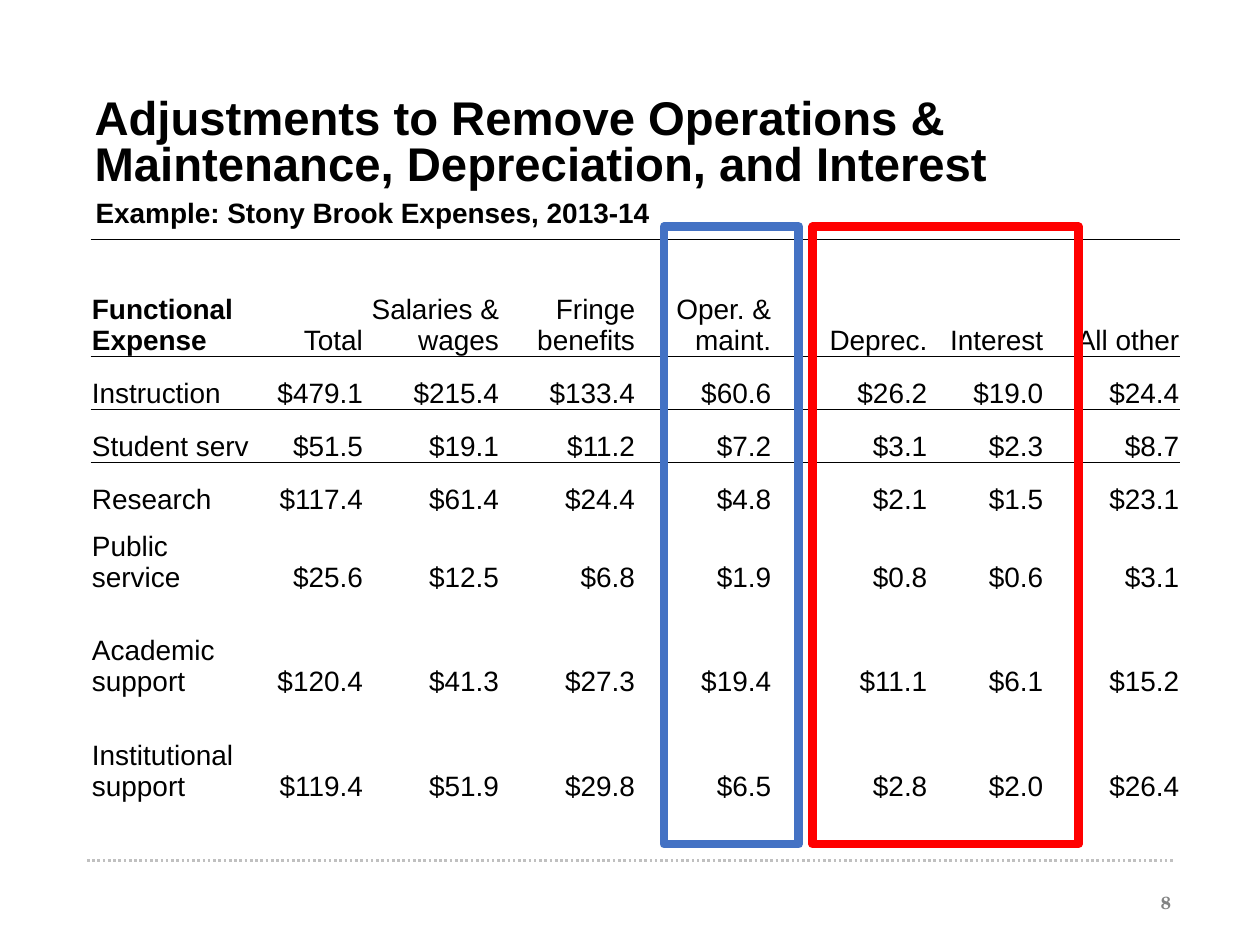
from lxml import etree
from pptx import Presentation
from pptx.dml.color import RGBColor
from pptx.enum.dml import MSO_LINE
from pptx.enum.shapes import MSO_CONNECTOR, MSO_SHAPE
from pptx.enum.text import MSO_ANCHOR, MSO_AUTO_SIZE, PP_ALIGN
from pptx.oxml import parse_xml
from pptx.oxml.ns import nsdecls, qn
from pptx.util import Inches, Pt

BLACK = RGBColor(0, 0, 0)
RED = RGBColor(0xFF, 0, 0)
BLUE = RGBColor(0x44, 0x72, 0xC4)
GRAY = RGBColor(0x82, 0x83, 0x83)
SILVER = RGBColor(0xC0, 0xC0, 0xC0)
LEFT, RIGHT = PP_ALIGN.LEFT, PP_ALIGN.RIGHT
TOP, BOTTOM = MSO_ANCHOR.TOP, MSO_ANCHOR.BOTTOM
NO_FIT, GROW = MSO_AUTO_SIZE.NONE, MSO_AUTO_SIZE.SHAPE_TO_FIT_TEXT
RECT, LINE, DOTS = MSO_SHAPE.RECTANGLE, MSO_CONNECTOR.STRAIGHT, MSO_LINE.ROUND_DOT
PLAIN = "{2D5ABB26-0587-4C30-8999-92F81FD0307C}"

deck = Presentation()
deck.slide_width, deck.slide_height = Inches(10), Inches(7.5)
UNIT = deck.slide_width / 100


def grid(*cells):
    return [round(n * UNIT) for n in cells]


def write(frame, text, size=16, font="Arial", color=BLACK, bold=False,
          align=LEFT, space=None):
    frame.text = text
    para = frame.paragraphs[0]
    para.alignment = align
    para.line_spacing = space
    face = para.runs[0].font if len(para.runs) == 1 else para.font
    for face in [run.font for run in para.runs]:
        face.size, face.name, face.bold = Pt(size), font, bold
        face.color.rgb = color


slide = deck.slides.add_slide(deck.slide_layouts[5])
shapes = slide.shapes

rule = shapes.add_connector(LINE, *grid(6.9, 68.3, 93.2, 68.3))
rule.line.color.rgb, rule.line.width = SILVER, Pt(1.5)
rule.line.dash_style = DOTS
etree.SubElement(rule._element.spPr, qn("a:effectLst"))

title = shapes.title
title.left, title.top, title.width, title.height = grid(6.5, 7.4, 87.4, 9)
frame = title.text_frame
frame.auto_size, frame.vertical_anchor, frame.word_wrap = NO_FIT, TOP, True
write(frame, "Adjustments to Remove Operations & Maintenance, "
      "Depreciation, and Interest", size=27, bold=True, space=0.8)

page = shapes.add_textbox(*grid(71.4, 70.3, 22.5, 4)).text_frame
page.word_wrap = True
write(page, "8", size=10, font="TeX Gyre Schola", color=GRAY, bold=True,
      align=RIGHT)

HEADS = ["Functional\vExpense", "Total", "Salaries & wages", "Fringe benefits",
         "Oper. & maint.", "Deprec.", "Interest", "All other"]
COSTS = [
    ("Instruction", 479.1, 215.4, 133.4, 60.6, 26.2, 19.0, 24.4),
    ("Student serv", 51.5, 19.1, 11.2, 7.2, 3.1, 2.3, 8.7),
    ("Research", 117.4, 61.4, 24.4, 4.8, 2.1, 1.5, 23.1),
    ("Public service", 25.6, 12.5, 6.8, 1.9, 0.8, 0.6, 3.1),
    ("Academic support", 120.4, 41.3, 27.3, 19.4, 11.1, 6.1, 15.2),
    ("Institutional support", 119.4, 51.9, 29.8, 6.5, 2.8, 2.0, 26.4),
]
ROWS = [HEADS] + [[name] + [f"${n:.1f}" for n in nums] for name, *nums in COSTS]
WIDE = grid(13.8, 7.9, 10.8, 10.8, 10.8, 12.4, 9.2, 10.8)
TALL = grid(9.3, 4.2, 4.2, 4.2, 6.2, 8.3, 8.3)
EDGES = {0: [("T", 1), ("B", 1)], 1: [("T", 1), ("B", 0.5)], 2: [("T", 0.5)]}

table = shapes.add_table(len(ROWS), len(HEADS), *grid(7.2, 19, 86.7, 44.8)).table
table.first_row = table.horz_banding = False
table._tbl.tblPr.find(qn("a:tableStyleId")).text = PLAIN
for col, wide in zip(table.columns, WIDE):
    col.width = wide
for r, (row, tall) in enumerate(zip(ROWS, TALL)):
    table.rows[r].height = tall
    for c, text in enumerate(row):
        cell = table.cell(r, c)
        cell.vertical_anchor = BOTTOM
        cell.margin_left = cell.margin_right = cell.margin_top = Inches(0.01)
        cell.margin_bottom = 0
        write(cell.text_frame, text, bold=r == c == 0, align=RIGHT if c else LEFT)
        for side, pts in EDGES.get(r, []):
            cell._tc.get_or_add_tcPr().append(parse_xml(
                f'<a:ln{side} {nsdecls("a")} w="{Pt(pts)}"><a:solidFill>'
                f'<a:srgbClr val="{BLACK}"/></a:solidFill></a:ln{side}>'))
        cell.fill.background()

for left, wide, color in [(64.5, 21.1, RED), (52.7, 10.7, BLUE)]:
    box = shapes.add_shape(RECT, *grid(left, 18, wide, 49))
    box.shadow.inherit = False
    box.fill.background()
    box.line.color.rgb, box.line.width = color, Pt(5)

note = shapes.add_textbox(*grid(6.6, 15, 46.5, 3.7)).text_frame
note.word_wrap, note.auto_size = False, GROW
write(note, "Example: Stony Brook Expenses, 2013-14", bold=True)

deck.save("out.pptx")
